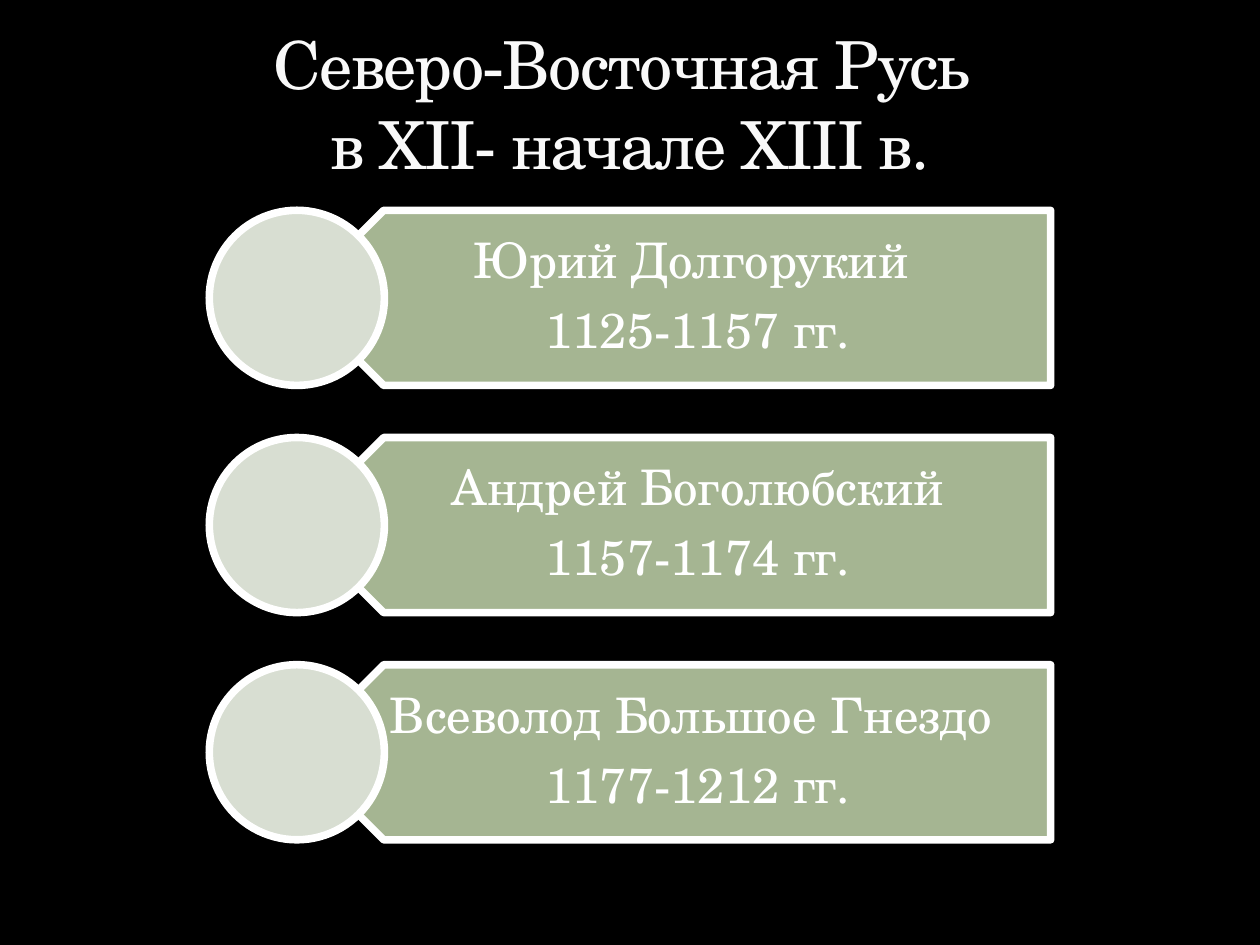
from pptx import Presentation
from pptx.dml.color import RGBColor
from pptx.enum.shapes import MSO_SHAPE
from pptx.enum.text import MSO_ANCHOR, PP_ALIGN
from pptx.util import Cm, Pt


def colour(hex_string):
    return RGBColor.from_string(hex_string)


class SlideBuilder:
    font_name = "TeX Gyre Schola"
    white = "FFFFFF"
    outline_width = Pt(4.33)

    def __init__(self, slide, background):
        self.slide = slide
        fill = slide.background.fill
        fill.solid()
        fill.fore_color.rgb = colour(background)

    def shape(self, preset, left, top, width, height, fill, rotation=0):
        shape = self.slide.shapes.add_shape(
            preset, Cm(left), Cm(top), Cm(width), Cm(height))
        shape.rotation = rotation
        shape.shadow.inherit = False
        shape.fill.solid()
        shape.fill.fore_color.rgb = colour(fill)
        shape.line.color.rgb = colour(self.white)
        shape.line.width = self.outline_width

    def text_frame(self, left, top, width, height, anchor, insets):
        """Add a text box; insets run left, top, right, bottom."""
        frame = self.slide.shapes.add_textbox(
            Cm(left), Cm(top), Cm(width), Cm(height)).text_frame
        frame.word_wrap = True
        frame.vertical_anchor = anchor
        (frame.margin_left, frame.margin_top,
         frame.margin_right, frame.margin_bottom) = map(Cm, insets)
        return frame

    def run(self, paragraph, text, size, ink):
        run = paragraph.add_run()
        run.text = text
        run.font.name = self.font_name
        run.font.size = Pt(size)
        run.font.color.rgb = colour(ink)
        return run

    def title(self, lines):
        frame = self.text_frame(1.27, 0.43, 22.86, 3.38, MSO_ANCHOR.BOTTOM,
                                (0.25, 0.13, 0.25, 0.13))
        heading = frame.paragraphs[0]
        heading.alignment = PP_ALIGN.CENTER
        for index, line in enumerate(lines):
            if index:
                heading.add_line_break()
            run = self.run(heading, line, 37.8, "F9F9F9")
            run.font._element.set("spc", "-100")

    def ruler(self, top, name, reign):
        """Add one banner with its circle, the ruler's name and years."""
        size = 3.53
        banner = (5.97, top, 15.21, size)
        self.shape(MSO_SHAPE.PENTAGON, *banner, "A5B592", rotation=180)
        frame = self.text_frame(*banner, MSO_ANCHOR.MIDDLE,
                                (1.55, 0.3, 0.56, 0.3))
        for paragraph, text in ((frame.paragraphs[0], name),
                                (frame.add_paragraph(), reign)):
            paragraph.alignment = PP_ALIGN.CENTER
            paragraph.line_spacing = 0.9
            paragraph.space_after = Pt(9.8)
            self.run(paragraph, text, 28, self.white)
        self.shape(MSO_SHAPE.OVAL, 4.22, top, size, size, "D8DED2")


def main():
    presentation = Presentation()
    presentation.slide_width = Cm(25.4)
    presentation.slide_height = Cm(19.05)
    slide = presentation.slides.add_slide(presentation.slide_layouts[6])
    builder = SlideBuilder(slide, "000000")

    rulers = (
        ("Юрий Долгорукий ", "1125-1157 гг."),
        ("Андрей Боголюбский", "1157-1174 гг."),
        ("Всеволод Большое Гнездо ", "1177-1212 гг."),
    )
    for row, (name, reign) in enumerate(rulers):
        builder.ruler(4.24 + row * 4.58, name, reign)
    builder.title(("Северо-Восточная Русь ", "в XII- начале XIII в."))

    presentation.save("out.pptx")


if __name__ == "__main__":
    main()
